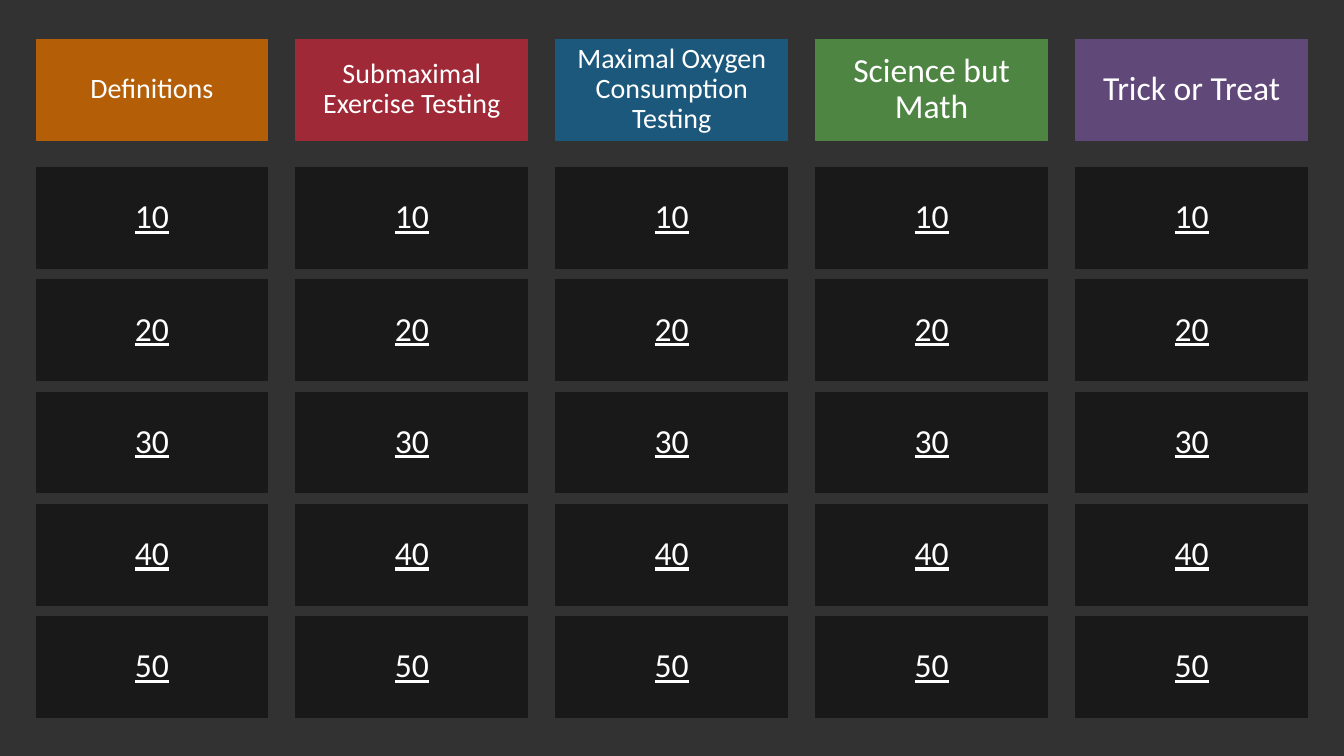
import dataclasses

import pptx
import pptx.dml.color
import pptx.enum.shapes
import pptx.enum.text
import pptx.util

Cm = pptx.util.Cm


@dataclasses.dataclass(frozen=True)
class Theme:
    background: str = "323232"
    tile: str = "191919"
    text: str = "FFFFFF"
    orange: str = "B45F07"
    red: str = "9F2936"
    blue: str = "1B587C"
    green: str = "4E8542"
    purple: str = "604878"
    font: str = "Calibri"
    small: int = 20
    large: int = 24
    border: float = 0.75
    line_spacing: float = 0.9


def rgb(value):
    return pptx.dml.color.RGBColor.from_string(value)


class Board:
    """Question board: category headers above a grid of point tiles."""

    LEFT, HEADER_TOP, TILES_TOP = 0.91, 0.99, 4.22
    WIDTH, HEIGHT = 5.84, 2.54
    COLUMN_STEP, ROW_STEP = 6.55, 2.83

    def __init__(self, slide, theme):
        self.slide = slide
        self.theme = theme
        slide.background.fill.solid()
        slide.background.fill.fore_color.rgb = rgb(theme.background)

    def box(self, column, top, text, color, size, underline=False):
        left = self.LEFT + column * self.COLUMN_STEP
        box = self.slide.shapes.add_shape(
            pptx.enum.shapes.MSO_SHAPE.RECTANGLE,
            Cm(left), Cm(top), Cm(self.WIDTH), Cm(self.HEIGHT))
        box.shadow.inherit = False
        box.fill.solid()
        box.fill.fore_color.rgb = rgb(color)
        box.line.color.rgb = rgb(color)
        box.line.width = pptx.util.Pt(self.theme.border)

        frame = box.text_frame
        frame.word_wrap = True
        frame.vertical_anchor = pptx.enum.text.MSO_ANCHOR.MIDDLE
        frame.text = text
        paragraph = frame.paragraphs[0]
        paragraph.alignment = pptx.enum.text.PP_ALIGN.CENTER
        paragraph.line_spacing = self.theme.line_spacing
        font = paragraph.runs[0].font
        font.name = self.theme.font
        font.size = pptx.util.Pt(size)
        font.color.rgb = rgb(self.theme.text)
        if underline:
            font.underline = True

    def header(self, column, category, color, size):
        self.box(column, self.HEADER_TOP, category, color, size)

    def tile(self, column, row, points):
        top = self.TILES_TOP + row * self.ROW_STEP
        self.box(column, top, str(points), self.theme.tile,
                 self.theme.large, underline=True)


def main():
    theme = Theme()
    presentation = pptx.Presentation()
    presentation.slide_width = Cm(33.87)
    presentation.slide_height = Cm(19.05)
    blank_layout = presentation.slide_layouts[6]
    board = Board(presentation.slides.add_slide(blank_layout), theme)

    categories = [
        ("Definitions", theme.orange, theme.small),
        ("Submaximal Exercise Testing", theme.red, theme.small),
        ("Maximal Oxygen Consumption Testing", theme.blue, theme.small),
        ("Science but Math", theme.green, theme.large),
        ("Trick or Treat", theme.purple, theme.large),
    ]

    # One column per category: header, then point tiles
    for column, (category, color, size) in enumerate(categories):
        board.header(column, category, color, size)
        for row, points in enumerate(range(10, 60, 10)):
            board.tile(column, row, points)

    presentation.save("out.pptx")


if __name__ == "__main__":
    main()
